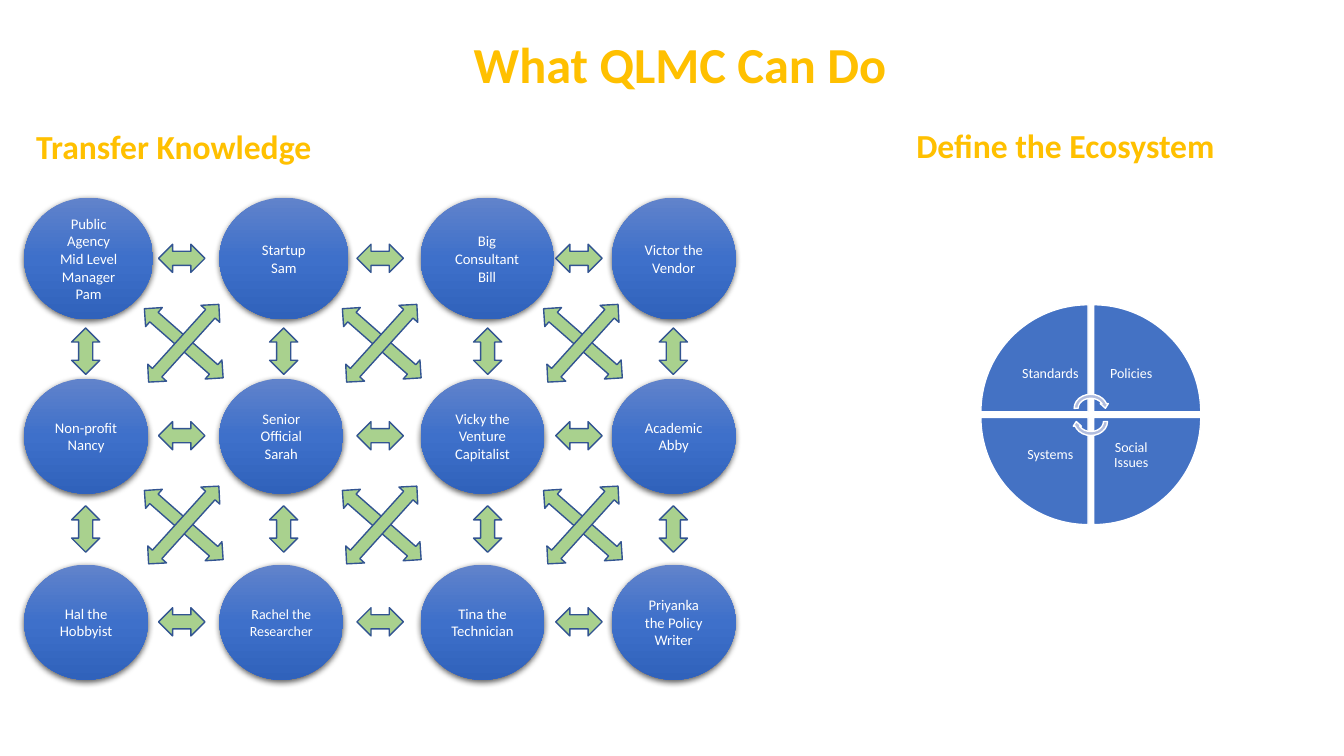
from copy import deepcopy
from itertools import product

from lxml import etree
from pptx import Presentation
from pptx.dml.color import RGBColor
from pptx.enum.shapes import MSO_SHAPE
from pptx.enum.text import MSO_ANCHOR, PP_ALIGN
from pptx.oxml.ns import qn
from pptx.util import Cm, Pt

ELLIPSE = MSO_SHAPE.OVAL
ARROW = MSO_SHAPE.UP_DOWN_ARROW
WEDGE = MSO_SHAPE.PIE_WEDGE
CYCLE_ARROW = MSO_SHAPE.CIRCULAR_ARROW
CENTER = PP_ALIGN.CENTER
TOP, MIDDLE = MSO_ANCHOR.TOP, MSO_ANCHOR.MIDDLE

GOLD = RGBColor(0xFF, 0xC0, 0x00)
WHITE = RGBColor(0xFF, 0xFF, 0xFF)
BLUE = RGBColor(0x44, 0x72, 0xC4)
PALE_BLUE = RGBColor(0xB0, 0xBC, 0xDE)
GREEN = RGBColor(0xA9, 0xD1, 0x8E)
NAVY = RGBColor(0x32, 0x54, 0x91)
BALL_TOP = RGBColor(0x61, 0x83, 0xCB)
BALL_MIDDLE = RGBColor(0x3E, 0x70, 0xCA)
BALL_BOTTOM = RGBColor(0x30, 0x62, 0xBB)

presentation = Presentation()
presentation.slide_width = Cm(33.87)
presentation.slide_height = Cm(19.05)
slide = presentation.slides.add_slide(presentation.slide_layouts[6])


def write_text(shape, text, size=10.5, color=WHITE, bold=False, anchor=MIDDLE,
               spacing=1.0, margin=None):
    frame = shape.text_frame
    frame.word_wrap = True
    frame.vertical_anchor = anchor
    if margin is not None:
        frame.margin_left = frame.margin_right = Cm(margin)
        frame.margin_top = frame.margin_bottom = Cm(margin)
    frame.text = text
    for paragraph in frame.paragraphs:
        paragraph.alignment = CENTER
        paragraph.line_spacing = spacing
        font = paragraph.runs[0].font
        font.name = "Calibri"
        font.size = Pt(size)
        font.bold = bold
        font.color.rgb = color


def add_centered(kind, x, y, width, height, fill, line, rotation=0):
    shape = slide.shapes.add_shape(
        kind, Cm(x - width / 2), Cm(y - height / 2), Cm(width), Cm(height))
    shape.rotation = rotation
    shape.shadow.inherit = False
    shape.fill.solid()
    shape.fill.fore_color.rgb = fill
    shape.line.color.rgb = line
    shape.line.width = Pt(1)
    return shape


headings = [
    ("What QLMC Can Do", 0.41, 0.71, 33.46, 1.8, 36),
    ("Transfer Knowledge", 0.61, 3.05, 7.54, 1.27, 24),
    ("Define the Ecosystem", 21.54, 3.02, 10.62, 1.27, 24),
]
for text, left, top, width, height, size in headings:
    box = slide.shapes.add_textbox(Cm(left), Cm(top), Cm(width), Cm(height))
    write_text(box, text, size=size, color=GOLD, bold=True, anchor=TOP)

column_lefts = [0.61, 5.53, 10.6, 15.42]
people_rows = [
    (4.98, 3.07, [3.25, 3.25, 3.35, 3.12],
     ["Public Agency\nMid Level Manager Pam", "Startup Sam",
      "Big Consultant Bill", "Victor the Vendor"]),
    (9.54, 2.9, [3.12] * 4,
     ["Non-profit Nancy", "Senior Official Sarah",
      "Vicky the Venture Capitalist", "Academic Abby"]),
    (14.23, 2.9, [3.12] * 4,
     ["Hal the Hobbyist", "Rachel the Researcher",
      "Tina the Technician", "Priyanka the Policy Writer"]),
]
for top, height, widths, people in people_rows:
    for left, width, person in zip(column_lefts, widths, people):
        ball = add_centered(ELLIPSE, left + width / 2, top + height / 2,
                            width, height, BLUE, BLUE)
        ball.line.fill.background()
        ball.fill.gradient()
        ball.fill.gradient_angle = 270
        stop_list = ball._element.spPr.find(qn("a:gradFill")).find(qn("a:gsLst"))
        stop_list.insert(1, deepcopy(stop_list[0]))
        colors = [BALL_TOP, BALL_MIDDLE, BALL_BOTTOM]
        for index, stop in enumerate(ball.fill.gradient_stops):
            stop.position = index / 2
            stop.color.rgb = colors[index]
        effects = ball._element.spPr.find(qn("a:effectLst"))
        shadow = etree.SubElement(effects, qn("a:outerShdw"), blurRad="57150",
                                  dist="19050", dir="5400000", algn="ctr",
                                  rotWithShape="0")
        shade = etree.SubElement(shadow, qn("a:srgbClr"), val="000000")
        etree.SubElement(shade, qn("a:alpha"), val="63000")
        write_text(ball, person, size=10 if person.startswith("Rachel") else 10.5)

arrow_grids = [
    ([2.16, 7.15, 12.29, 16.97], [8.85, 13.33], 0.71, 1.17, [0]),
    ([4.58, 9.58, 14.59], [6.51, 10.98, 15.67], 0.71, 1.17, [90]),
    ([4.63, 9.62, 14.69], [8.65, 13.23], 0.64, 2.64, [131.3, 42.1]),
]
for columns, rows, width, height, rotations in arrow_grids:
    for x, y, rotation in product(columns, rows, rotations):
        add_centered(ARROW, x, y, width, height, GREEN, NAVY, rotation)

wheel_x, wheel_y = 27.49, 10.45
wedge_size, wedge_offset = 2.7, 1.42
label_size, label_offset = 1.91, 1.02
quadrants = [("Standards", -1, -1), ("Policies", 1, -1),
             ("Social Issues", 1, 1), ("Systems", -1, 1)]
for index, (topic, side, level) in enumerate(quadrants):
    add_centered(WEDGE, wheel_x + side * wedge_offset, wheel_y + level * wedge_offset,
                 wedge_size, wedge_size, BLUE, WHITE, index * 90)
    label = slide.shapes.add_textbox(
        Cm(wheel_x + side * label_offset - label_size / 2),
        Cm(wheel_y + level * label_offset - label_size / 2),
        Cm(label_size), Cm(label_size))
    write_text(label, topic, size=10, spacing=0.9, margin=0.2)

for y, rotation in [(10.29, 0), (10.62, 180)]:
    add_centered(CYCLE_ARROW, wheel_x, y, 0.94, 0.81, PALE_BLUE, WHITE, rotation)

presentation.save("out.pptx")
